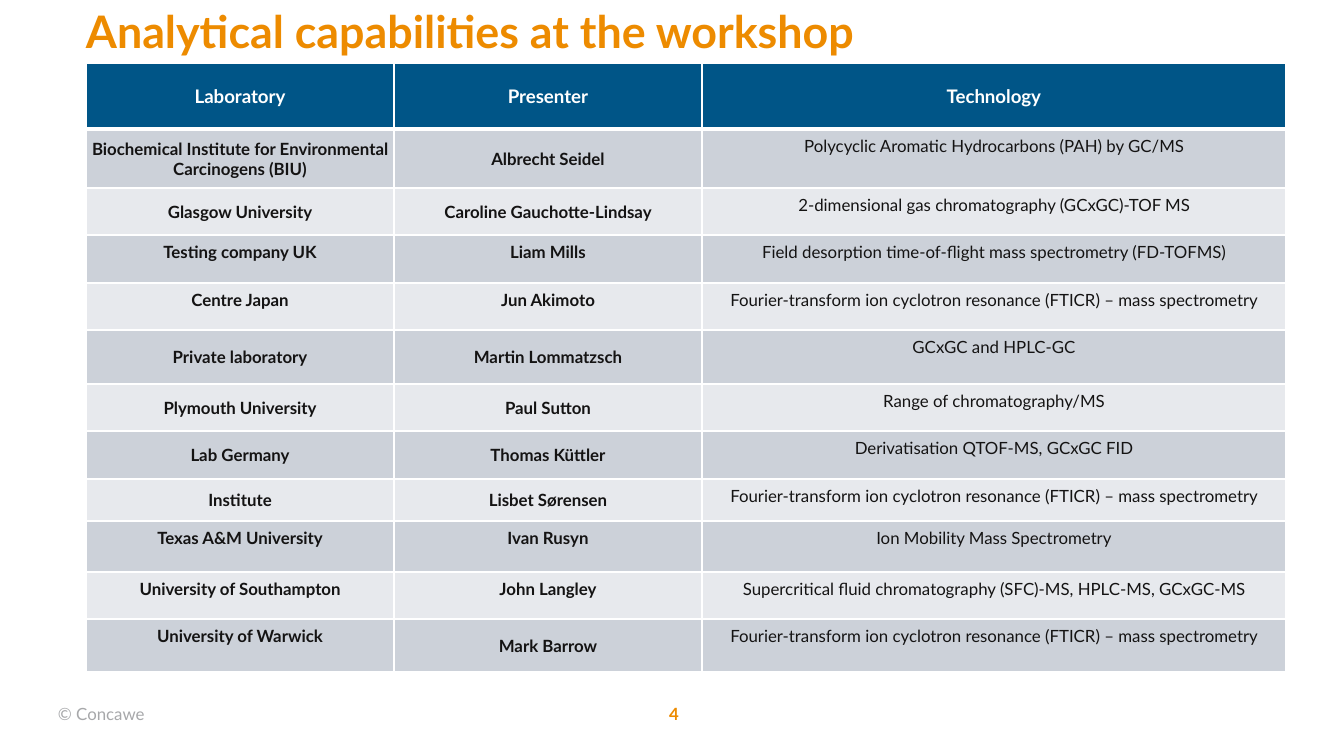
from lxml import etree
from pptx import Presentation
from pptx.dml.color import RGBColor
from pptx.enum.text import MSO_ANCHOR as ANCHOR, MSO_AUTO_SIZE, PP_ALIGN as ALIGN
from pptx.oxml.ns import qn
from pptx.util import Pt

PX = 914400 / 134.4  # EMU per px
COLORS = {
    "orange": "ED8B00", "blue": "005587", "white": "FFFFFF", "ink": "141313",
    "gray": "A7A8AA", "dark_band": "CCD1D9", "light_band": "E7E9ED",
}


def emu(*lengths):
    return [round(n * PX) for n in lengths]


def style(p, size, color, bold, align):
    p.alignment = align
    p.font.name = "Lato"
    p.font.size = Pt(size)
    p.font.bold = bold
    p.font.color.rgb = RGBColor.from_string(COLORS[color])


prs = Presentation()
prs.slide_width, prs.slide_height = emu(1344, 756)
s = prs.slides.add_slide(prs.slide_layouts[5])

# Title
title = s.shapes.title
title.left, title.top, title.width, title.height = emu(86, 4, 1258, 48)
tf = title.text_frame
tf.text = "Analytical capabilities at the workshop"
tf.auto_size = MSO_AUTO_SIZE.NONE
tf.vertical_anchor = ANCHOR.TOP
tf.margin_left = tf.margin_top = 0
style(tf.paragraphs[0], 24, "orange", True, ALIGN.LEFT)

# Table: row height, then anchors of laboratory and presenter (m middle, t top), then texts
FTICR = "Fourier-transform ion cyclotron resonance (FTICR) – mass spectrometry"
rows = [
    (66, "mm", "Laboratory", "Presenter", "Technology"),
    (59, "mm", "Biochemical Institute for Environmental Carcinogens (BIU)", "Albrecht Seidel",
     "Polycyclic Aromatic Hydrocarbons (PAH) by GC/MS"),
    (47, "mm", "Glasgow University", "Caroline Gauchotte-Lindsay",
     "2-dimensional gas chromatography (GCxGC)-TOF MS"),
    (48, "tt", "Testing company UK", "Liam Mills",
     "Field desorption time-of-flight mass spectrometry (FD-TOFMS)"),
    (47, "tt", "Centre Japan", "Jun Akimoto", FTICR),
    (54, "mm", "Private laboratory", "Martin Lommatzsch", "GCxGC and HPLC-GC"),
    (47, "mm", "Plymouth University", "Paul Sutton", "Range of chromatography/MS"),
    (48, "mm", "Lab Germany", "Thomas Küttler", "Derivatisation QTOF-MS, GCxGC FID"),
    (42, "mm", "Institute", "Lisbet Sørensen", FTICR),
    (51, "tt", "Texas A&M University", "Ivan Rusyn", "Ion Mobility Mass Spectrometry"),
    (47, "tt", "University of Southampton", "John Langley",
     "Supercritical fluid chromatography (SFC)-MS, HPLC-MS, GCxGC-MS"),
    (53, "tm", "University of Warwick", "Mark Barrow", FTICR),
]
col_widths = [308, 308, 584]
table_height = sum(row[0] for row in rows)
table = s.shapes.add_table(len(rows), 3, *emu(86, 63, sum(col_widths), table_height)).table
for column, width in zip(table.columns, emu(*col_widths)):
    column.width = width

for i, (height, anchors, *texts) in enumerate(rows):
    table.rows[i].height = emu(height)[0]
    header = i == 0
    band = "blue" if header else "dark_band" if i % 2 else "light_band"
    for j, text in enumerate(texts):
        cell = table.cell(i, j)
        cell.text = text
        middle = header or (j < 2 and anchors[j] == "m")
        cell.vertical_anchor = ANCHOR.MIDDLE if middle else ANCHOR.TOP
        if middle and not header:
            cell.margin_left, cell.margin_top, cell.margin_right, cell.margin_bottom = emu(1, 1, 1, 0)
        style(cell.text_frame.paragraphs[0], 10 if header else 9,
              "white" if header else "ink", header or j < 2, ALIGN.CENTER)

        # White borders, thick under the header; they precede the fill in the XML
        tcPr = cell._tc.get_or_add_tcPr()
        for side in "LRTB":
            thick = (i, side) in ((0, "B"), (1, "T"))
            ln = etree.SubElement(tcPr, qn(f"a:ln{side}"), w=str(Pt(3 if thick else 1)))
            fill = etree.SubElement(ln, qn("a:solidFill"))
            etree.SubElement(fill, qn("a:srgbClr"), val=COLORS["white"])
        cell.fill.solid()
        cell.fill.fore_color.rgb = RGBColor.from_string(COLORS[band])

# Footer: copyright and page number
for text, box, bottom, color, bold, align in [
    ("© Concawe", (58, 704, 118, 27), 7, "gray", False, ALIGN.LEFT),
    ("4", (648, 704, 52, 20), 0, "orange", True, ALIGN.CENTER),
]:
    tf = s.shapes.add_textbox(*emu(*box)).text_frame
    tf.word_wrap = True
    tf.vertical_anchor = ANCHOR.MIDDLE
    tf.margin_left, tf.margin_top, tf.margin_right, tf.margin_bottom = emu(0, 0, 0, bottom)
    tf.text = text
    style(tf.paragraphs[0], 9, color, bold, align)

prs.save("out.pptx")
